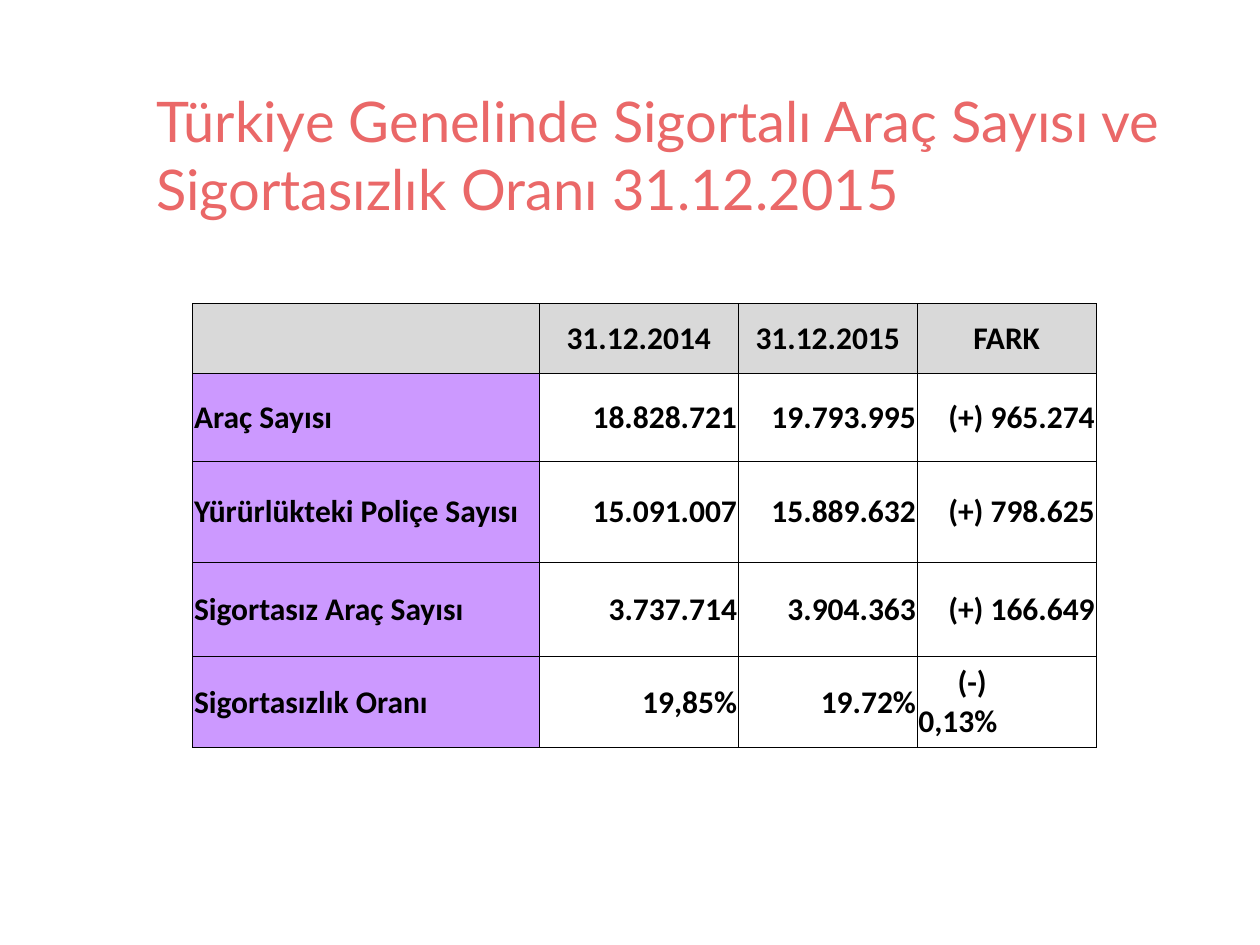
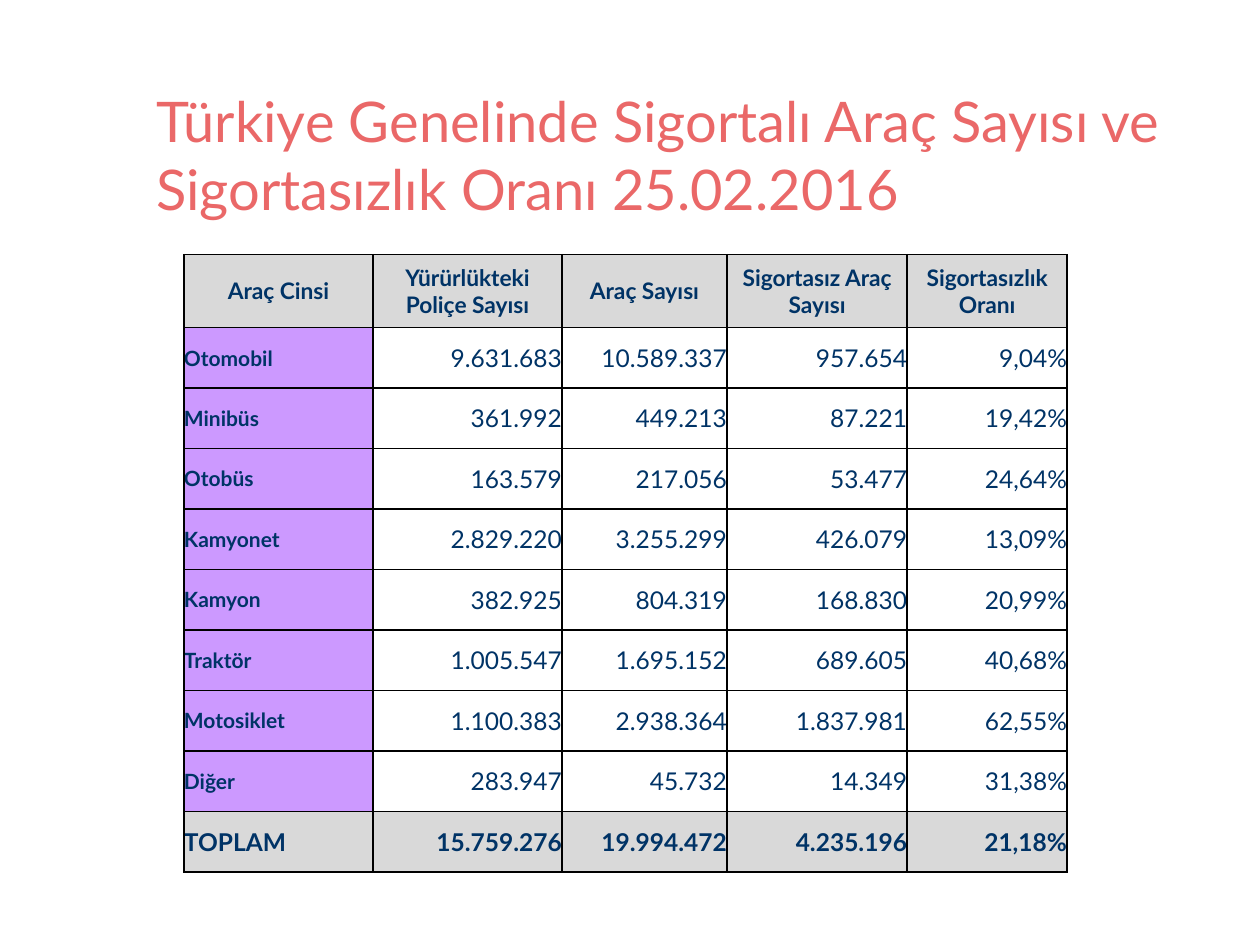
from lxml.etree import SubElement
from pptx import Presentation
from pptx.dml.color import RGBColor
from pptx.enum.text import MSO_ANCHOR, MSO_AUTO_SIZE, PP_ALIGN
from pptx.oxml import parse_xml
from pptx.oxml.ns import nsdecls, qn
from pptx.util import Inches, Pt

WHITE = RGBColor(0xFF, 0xFF, 0xFF)
BLACK = RGBColor(0x00, 0x00, 0x00)
CORAL = RGBColor(0xEA, 0x68, 0x68)
NAVY = RGBColor(0x00, 0x33, 0x66)
GREY = RGBColor(0xD9, 0xD9, 0xD9)
LILAC = RGBColor(0xCC, 0x99, 0xFF)

TITLE = "Türkiye Genelinde Sigortalı Araç Sayısı ve Sigortasızlık Oranı "
TITLE_FONT = {"name": "Lato", "size": Pt(32), "bold": False, "color": CORAL}

SUMMARY = [
    ["", "31.12.2014", "31.12.2015", "FARK"],
    ["Araç Sayısı", "18.828.721", "19.793.995", "(+) 965.274"],
    ["Yürürlükteki Poliçe Sayısı", "15.091.007", "15.889.632", "(+) 798.625"],
    ["Sigortasız Araç Sayısı", "3.737.714", "3.904.363", "(+) 166.649"],
    ["Sigortasızlık Oranı", "19,85%", "19.72%", "(-)\t0,13%"],
]
VEHICLES = [
    ["Araç Cinsi", "Yürürlükteki Poliçe Sayısı", "Araç Sayısı",
     "Sigortasız Araç Sayısı", "Sigortasızlık Oranı"],
    ["Otomobil", "9.631.683", "10.589.337", "957.654", "9,04%"],
    ["Minibüs", "361.992", "449.213", "87.221", "19,42%"],
    ["Otobüs", "163.579", "217.056", "53.477", "24,64%"],
    ["Kamyonet", "2.829.220", "3.255.299", "426.079", "13,09%"],
    ["Kamyon", "382.925", "804.319", "168.830", "20,99%"],
    ["Traktör", "1.005.547", "1.695.152", "689.605", "40,68%"],
    ["Motosiklet", "1.100.383", "2.938.364", "1.837.981", "62,55%"],
    ["Diğer", "283.947", "45.732", "14.349", "31,38%"],
    ["TOPLAM", "15.759.276", "19.994.472", "4.235.196", "21,18%"],
]

SUMMARY_FONT = {"name": "Calibri", "size": Pt(18), "bold": True, "color": BLACK}
VEHICLE_FONT = {"name": "Lato", "size": Pt(14), "bold": False, "color": NAVY}
SUMMARY_STYLE = {
    "fonts": dict.fromkeys(("header", "label", "value"), SUMMARY_FONT),
    "border": Pt(0.5), "margin": Inches(0.01), "has_total": False,
}
VEHICLE_STYLE = {
    "fonts": {
        "header": VEHICLE_FONT | {"size": Pt(13), "bold": True},
        "label": VEHICLE_FONT | {"size": Pt(12), "bold": True},
        "value": VEHICLE_FONT,
        "total": VEHICLE_FONT | {"bold": True},
    },
    "border": Pt(1), "margin": 0, "has_total": True,
}
FILLS = {"header": GREY, "label": LILAC, "value": None, "total": GREY}


def set_values(target, values):
    for name, value in values.items():
        setattr(target, name, value)


def set_font(font, values):
    set_values(font, {k: v for k, v in values.items() if k != "color"})
    font.color.rgb = values["color"]


def set_borders(cell, width):
    properties = cell._tc.get_or_add_tcPr()
    for index, side in enumerate("LRTB"):
        properties.insert(index, parse_xml(
            f'<a:ln{side} {nsdecls("a")} w="{width}"><a:solidFill>'
            f'<a:srgbClr val="{BLACK}"/></a:solidFill></a:ln{side}>'))


def spread_by_tab(para, indent, tab):
    """Start the line at indent and end its tabbed part at a right tab."""
    para.alignment = PP_ALIGN.LEFT
    properties = para._p.get_or_add_pPr()
    properties.set("marL", "0")
    properties.set("indent", str(indent))
    tabs = SubElement(properties, qn("a:tabLst"))
    SubElement(tabs, qn("a:tab"), pos=str(tab), algn="r")


class SlideMaker:
    def __init__(self):
        self.deck = Presentation()
        set_values(self.deck, {"slide_width": Inches(10), "slide_height": Inches(7.5)})
        self.page = None

    def add_page(self, date):
        self.page = self.deck.slides.add_slide(self.deck.slide_layouts[5])
        box = self.page.shapes.title
        set_values(box, {"left": Inches(1.14), "top": Inches(0.64),
                         "width": Inches(8.25), "height": Inches(1.18)})
        box.fill.solid()
        box.fill.fore_color.rgb = WHITE
        frame = box.text_frame
        set_values(frame, {"text": TITLE + date, "word_wrap": True,
                           "auto_size": MSO_AUTO_SIZE.NONE,
                           "vertical_anchor": MSO_ANCHOR.TOP})
        para = frame.paragraphs[0]
        para.alignment = PP_ALIGN.LEFT
        set_font(para.runs[0].font, TITLE_FONT)

    def add_table(self, rows, left, top, widths, heights, style):
        frame = self.page.shapes.add_table(
            len(rows), len(widths), Inches(left), Inches(top),
            Inches(sum(widths)), Inches(sum(heights)))
        table = frame.table
        table.horz_banding = False
        for column, width in zip(table.columns, widths):
            column.width = Inches(width)
        for line, height in zip(table.rows, heights):
            line.height = Inches(height)
        for r, texts in enumerate(rows):
            for c, text in enumerate(texts):
                if r == 0:
                    role = "header"
                elif style["has_total"] and r == len(rows) - 1:
                    role = "total"
                else:
                    role = "value" if c else "label"
                self.fill_cell(table.cell(r, c), text, role, c == 0, style)

    def fill_cell(self, cell, text, role, is_first, style):
        margin = style["margin"]
        set_values(cell, {"margin_left": margin, "margin_right": margin,
                          "margin_top": margin, "margin_bottom": 0,
                          "vertical_anchor": MSO_ANCHOR.MIDDLE})
        if FILLS[role] is None:
            cell.fill.background()
        else:
            cell.fill.solid()
            cell.fill.fore_color.rgb = FILLS[role]
        set_borders(cell, style["border"])
        para = cell.text_frame.paragraphs[0]
        if role == "header":
            para.alignment = PP_ALIGN.CENTER
        else:
            para.alignment = PP_ALIGN.LEFT if is_first else PP_ALIGN.RIGHT
        if "\t" in text:
            spread_by_tab(para, Inches(0.31), Inches(1.39))
        if text:
            span = para.add_run()
            span.text = text
            set_font(span.font, style["fonts"][role])


def main():
    maker = SlideMaker()
    maker.add_page("31.12.2015")
    maker.add_table(SUMMARY, 1.53, 2.41, [2.75, 1.58, 1.42, 1.42],
                    [0.55, 0.7, 0.8, 0.75, 0.72], SUMMARY_STYLE)
    maker.add_page("25.02.2016")
    maker.add_table(VEHICLES, 1.46, 2.02, [1.5, 1.5, 1.31, 1.43, 1.27],
                    [0.58] + [0.48] * 9, VEHICLE_STYLE)
    maker.deck.save("out.pptx")


if __name__ == "__main__":
    main()
